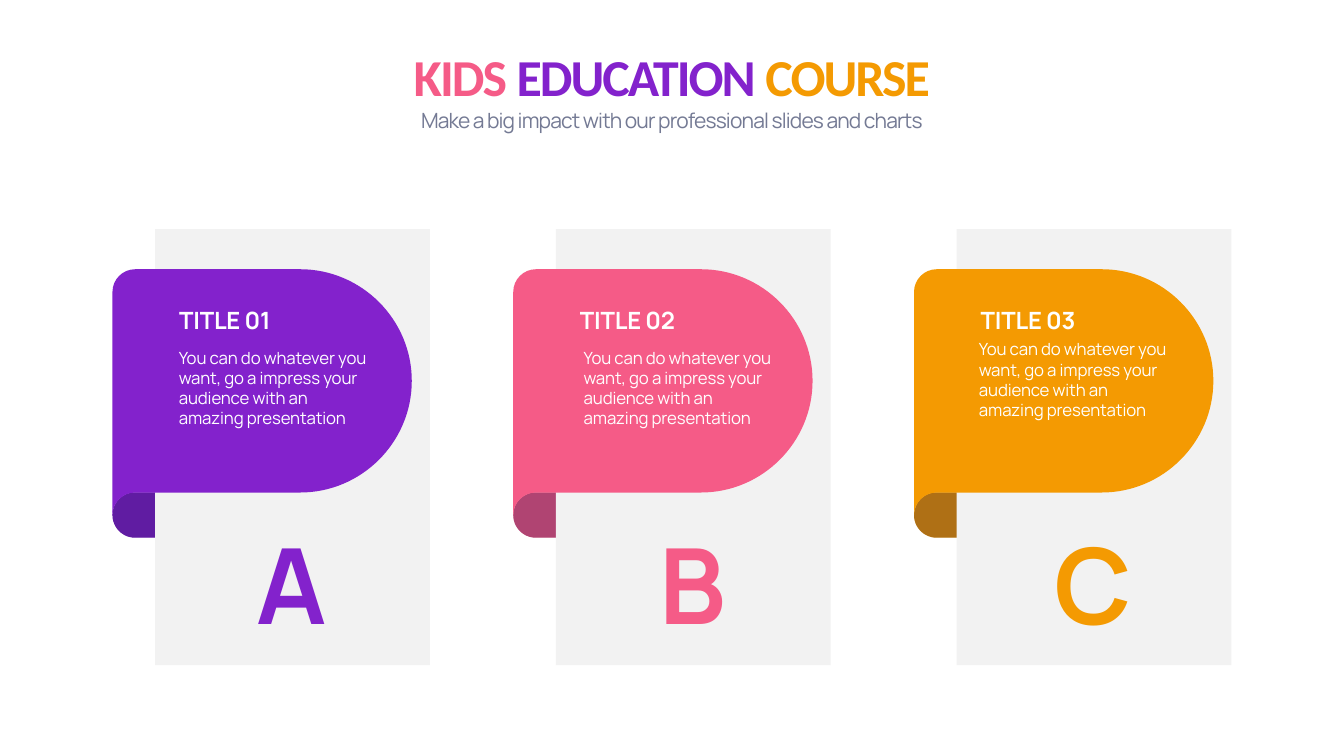
from lxml.etree import SubElement
from pptx import Presentation
from pptx.dml.color import RGBColor
from pptx.enum.shapes import MSO_SHAPE
from pptx.enum.text import MSO_ANCHOR, MSO_AUTO_SIZE, PP_ALIGN
from pptx.oxml.ns import qn
from pptx.util import Pt

PURPLE = RGBColor(0x83, 0x22, 0xCC)
PINK = RGBColor(0xF5, 0x5B, 0x87)
ORANGE = RGBColor(0xF4, 0x9A, 0x02)
PANEL = RGBColor(0xF2, 0xF2, 0xF2)
SHADE = RGBColor(0x12, 0x11, 0x43)
SLATE = RGBColor(0x74, 0x7A, 0x94)
WHITE = RGBColor(0xFF, 0xFF, 0xFF)

WIDTH, HEIGHT = 1919.5, 1080
LEFT, TOP, PITCH = 160.6, 327.4, 572.4
CURL = 32.4
BEND = 0.55
BODY = ("You can do whatever you want, go a impress your "
        "audience with an amazing presentation")
CARDS = [
    ("A", "TITLE 01", PURPLE, 87.8, 165.1),
    ("B", "TITLE 02", PINK, 93.6, 165.1),
    ("C", "TITLE 03", ORANGE, 85.7, 153.6),
]


def paint(shape, color, alpha=None):
    """Give a shape a flat fill, with no line or shadow."""
    shape.shadow.inherit = False
    shape.fill.solid()
    shape.fill.fore_color.rgb = color
    shape.line.fill.background()
    if alpha is not None:
        tint = shape.fill._xPr.find(qn("a:solidFill"))[0]
        SubElement(tint, qn("a:alpha")).set("val", str(alpha * 1000))


def write(shape, box, runs, size, font="Manrope", bold=False, gap=0,
          align=PP_ALIGN.LEFT, anchor=MSO_ANCHOR.TOP, lead=None):
    """Place a text shape and fill it with coloured runs."""
    shape.left, shape.top, shape.width, shape.height = map(Pt, box)
    frame = shape.text_frame
    frame.word_wrap = True
    frame.auto_size = MSO_AUTO_SIZE.NONE
    frame.vertical_anchor = anchor
    para = frame.paragraphs[0]
    para.alignment = align
    if lead:
        para.line_spacing = Pt(lead)
    for text, color in runs:
        run = para.add_run()
        run.text = text
        run.font.name = font
        run.font.size = Pt(size)
        run.font.bold = bold
        run.font.color.rgb = color
        run._r.get_or_add_rPr().set("spc", str(round(gap * 100)))


def label(shapes, *args, **style):
    """Add a text box and write in it."""
    write(shapes.add_textbox(0, 0, 0, 0), *args, **style)


def bend(line, start, end, corner):
    """Turn a straight path step into a quarter round towards a corner."""
    curve = line.makeelement(qn("a:cubicBezTo"))
    pulls = [[p + BEND * (c - p) for p, c in zip(dot, corner)]
             for dot in (start, end)]
    for a, b in (*pulls, end):
        node = SubElement(curve, qn("a:pt"))
        node.set("x", str(Pt(a)))
        node.set("y", str(Pt(b)))
    line.getparent().replace(line, curve)


def flag(shapes, x, y, width, height, color):
    """Draw a banner with a round right end and a curled lower left corner."""
    half = height / 2
    flat = width - half
    steps = [
        ((width, half), None),
        ((flat, height), (width, height)),
        ((CURL, height), None),
        ((0, height + CURL), (0, height)),
        ((0, CURL), None),
        ((CURL, 0), (0, 0)),
        ((flat, 0), None),
        ((width, half), (width, 0)),
    ]
    dots = [(Pt(a), Pt(b)) for (a, b), _ in steps]
    pen = shapes.build_freeform(*dots[0])
    pen.add_line_segments(dots[1:], close=True)
    shape = pen.convert_to_shape(Pt(x), Pt(y))
    lines = list(shape._element.iter(qn("a:lnTo")))
    for line, (start, _), (end, corner) in zip(lines, steps, steps[1:]):
        if corner:
            bend(line, start, end, corner)
    paint(shape, color)


def card(shapes, x, y, letter, title, color, dx, dy):
    """Draw one card: roll, panel, flag and texts."""
    for tone, alpha in ((color, None), (SHADE, 30)):
        roll = shapes.add_shape(MSO_SHAPE.ROUNDED_RECTANGLE, Pt(x), Pt(y + 376),
                                Pt(146.9), Pt(2 * CURL))
        roll.adjustments[0] = 0.5
        paint(roll, tone, alpha)
    panel = shapes.add_shape(MSO_SHAPE.RECTANGLE, Pt(x + 61), Pt(y),
                             Pt(392.4), Pt(622.8))
    paint(panel, PANEL)
    flag(shapes, x, y + 57.2, 427.5, 319, color)
    label(shapes, (x + 160, y + 409.9, 192.2, 189.4), [(letter, color)], 150,
          bold=True, gap=-2.9, align=PP_ALIGN.CENTER, anchor=MSO_ANCHOR.MIDDLE)
    label(shapes, (x + 88.2, y + 105.3, 294.5, 48.2), [(title, WHITE)], 34,
          bold=True, gap=-0.3, anchor=MSO_ANCHOR.BOTTOM)
    label(shapes, (x + dx, y + dy, 295.2, 123.8), [(BODY, WHITE)], 24, gap=-0.2)


def header(shapes, x, y, width):
    """Write the slide title and the line below it."""
    words = [("KIDS ", PINK), ("EDUCATION", PURPLE), (" COURSE", ORANGE)]
    write(shapes.title, (x, y, width, 101.2), words, 74, font="Calibri",
          bold=True, gap=-2.9, align=PP_ALIGN.CENTER,
          anchor=MSO_ANCHOR.BOTTOM, lead=94)
    label(shapes, (x, y + 90, width, 47.5),
          [("Make a big impact with our professional slides and charts", SLATE)],
          30, gap=-1.2, align=PP_ALIGN.CENTER, lead=42)


def main():
    """Build the slide and save it."""
    deck = Presentation()
    deck.slide_width, deck.slide_height = Pt(WIDTH), Pt(HEIGHT)
    shapes = deck.slides.add_slide(deck.slide_layouts[5]).shapes
    header(shapes, 119.5, 54.7, 1679.8)
    for i, parts in enumerate(CARDS):
        card(shapes, LEFT + i * PITCH, TOP, *parts)
    deck.save("out.pptx")


if __name__ == "__main__":
    main()
